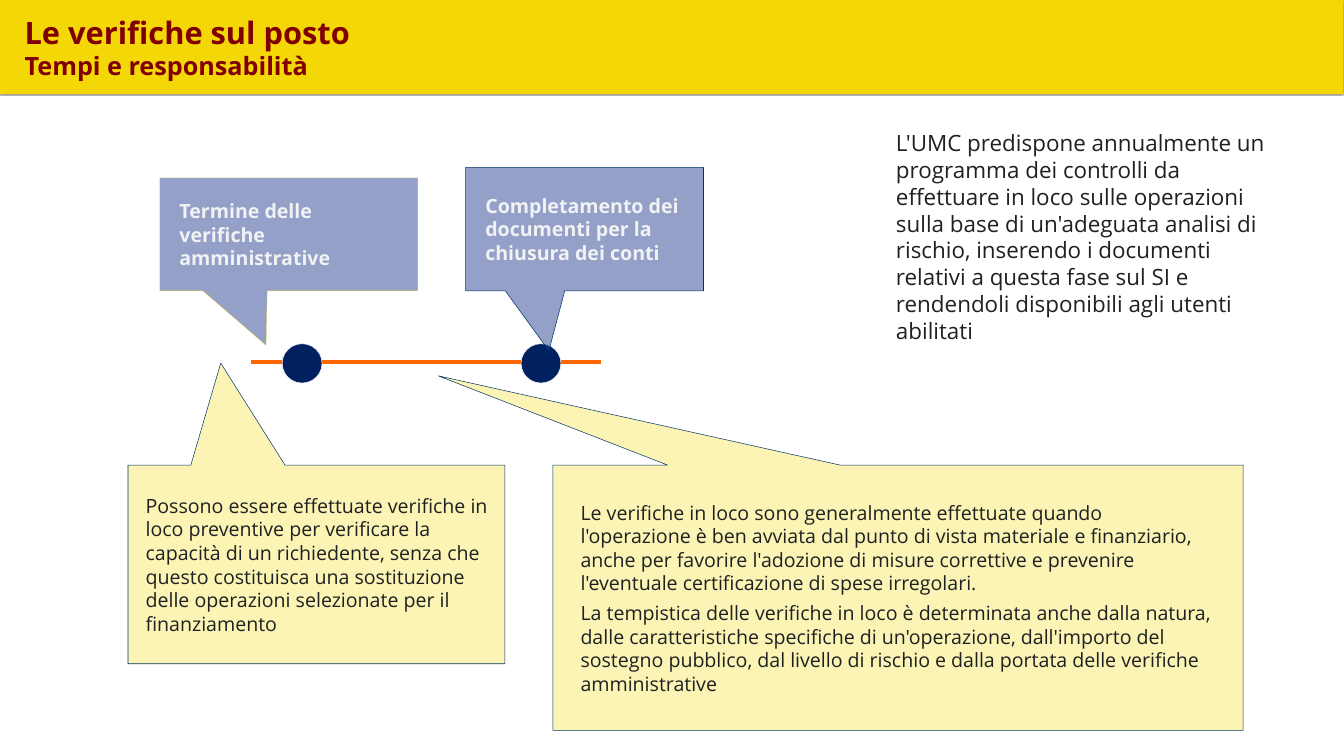
from dataclasses import dataclass

from lxml.etree import SubElement
from pptx import Presentation
from pptx.dml.color import RGBColor
from pptx.enum.shapes import MSO_CONNECTOR, MSO_SHAPE
from pptx.enum.text import MSO_ANCHOR, PP_ALIGN
from pptx.oxml.ns import qn
from pptx.util import Inches, Pt

FONT = "Open Sans"
COLORS = {
    "banner": "F3D707",
    "title": "800000",
    "text": "1D2122",
    "light": "F0F2F4",
    "timeline": "FF6600",
    "milestone": "002060",
    "blue": "2B4390",
    "yellow": "FBEA6C",
    "gold": "F9DC0A",
    "outline": "003366",
    "shadow": "000000",
}


@dataclass
class Callout:
    box: tuple[float, float, float, float]
    tip: tuple[float, float]
    fill: str
    line: str
    line_width: float
    insets: tuple[float, float, float, float]
    color: str
    bold: bool
    paragraphs: list[str]


CALLOUTS = [
    Callout((3.17, 3.53, 5.12, 2.24), (-0.088, 0.983), "blue", "gold", 0.25,
            (0.39, 0.39, 0.39, 0.39), "light", True,
            ["Termine delle verifiche amministrative"]),
    Callout((9.24, 3.32, 4.72, 2.45), (-0.15, 0.985), "blue", "outline", 0.75,
            (0.39, 0.39, 0.39, 0.39), "light", True,
            ["Completamento dei documenti per la chiusura dei conti"]),
    Callout((10.97, 9.23, 13.7, 5.26), (-0.666, -0.837), "yellow", "outline", 0.75,
            (0.55, 0.05, 0.63, 0.05), "text", False,
            ["Le verifiche in loco sono generalmente effettuate quando l'operazione è ben "
             "avviata dal punto di vista materiale e finanziario, anche per favorire "
             "l'adozione di misure correttive e prevenire l'eventuale certificazione di "
             "spese irregolari.",
             "La tempistica delle verifiche in loco è determinata anche dalla natura, dalle "
             "caratteristiche specifiche di un'operazione, dall'importo del sostegno "
             "pubblico, dal livello di rischio e dalla portata delle verifiche "
             "amministrative"]),
    Callout((2.54, 9.23, 7.48, 3.94), (-0.254, -1.014), "yellow", "outline", 0.75,
            (0.35, 0.08, 0.1, 0.08), "text", False,
            ["Possono essere effettuate verifiche in loco preventive per verificare la "
             "capacità di un richiedente, senza che questo costituisca una sostituzione "
             "delle operazioni selezionate per il finanziamento"]),
]
PROGRAMME = ("L'UMC predispone annualmente un programma dei controlli da effettuare in loco "
             "sulle operazioni sulla base di un'adeguata analisi di rischio, inserendo i "
             "documenti relativi a questa fase sul SI e rendendoli disponibili agli utenti "
             "abilitati")


def rgb(name: str) -> RGBColor:
    return RGBColor.from_string(COLORS[name])


def add_run(p, text: str, size: float, color: str, bold: bool = False) -> None:
    r = p.add_run()
    r.text = text
    r.font.name = FONT
    r.font.size = Pt(size)
    r.font.bold = bold
    r.font.color.rgb = rgb(color)


def set_frame(tf, insets: tuple, anchor) -> None:
    tf.word_wrap = True
    tf.vertical_anchor = anchor
    tf.margin_left, tf.margin_top, tf.margin_right, tf.margin_bottom = map(Inches, insets)


def add_shape(s, kind, box: tuple, fill: str, line: str | None = None, width: float = 0.75):
    sp = s.shapes.add_shape(kind, *map(Inches, box))
    sp.shadow.inherit = False
    sp.fill.solid()
    sp.fill.fore_color.rgb = rgb(fill)
    if line:
        sp.line.color.rgb = rgb(line)
        sp.line.width = Pt(width)
    else:
        sp.line.fill.background()
    return sp


def add_alpha(color, percent: int) -> None:
    SubElement(color, qn("a:alpha"), val=str(percent * 1000))


def add_banner(s) -> None:
    sp = add_shape(s, MSO_SHAPE.RECTANGLE, (-0.02, 0, 26.67, 1.87), "banner")
    effects = sp._element.spPr.find(qn("a:effectLst"))
    shadow = SubElement(effects, qn("a:outerShdw"), blurRad=str(Pt(2)), dist="0", dir="0")
    add_alpha(SubElement(shadow, qn("a:srgbClr"), val=COLORS["shadow"]), 50)


def add_text_box(s, box: tuple, insets: tuple, anchor):
    """Add an empty text box and return its first paragraph."""
    tf = s.shapes.add_textbox(*map(Inches, box)).text_frame
    set_frame(tf, insets, anchor)
    return tf.paragraphs[0]


def add_timeline(s) -> None:
    y = Inches(7.18)
    line = s.shapes.add_connector(MSO_CONNECTOR.STRAIGHT, Inches(4.99), y, Inches(11.92), y)
    line.line.color.rgb = rgb("timeline")
    line.line.width = Pt(5)
    SubElement(line._element.spPr, qn("a:effectLst"))
    for x in (5.6, 10.34):
        add_shape(s, MSO_SHAPE.OVAL, (x, 6.82, 0.79, 0.78), "milestone", "light")


def add_callout(s, c: Callout) -> None:
    sp = add_shape(s, MSO_SHAPE.RECTANGULAR_CALLOUT, c.box, c.fill, c.line, c.line_width)
    sp.adjustments[0], sp.adjustments[1] = c.tip
    add_alpha(sp._element.spPr.find(qn("a:solidFill"))[0], 50)
    tf = sp.text_frame
    set_frame(tf, c.insets, MSO_ANCHOR.MIDDLE)
    for i, text in enumerate(c.paragraphs):
        p = tf.add_paragraph() if i else tf.paragraphs[0]
        p.alignment = PP_ALIGN.LEFT
        if i:
            p.space_before = Pt(9)
        add_run(p, text, 28, c.color, c.bold)


def main() -> None:
    prs = Presentation()
    prs.slide_width, prs.slide_height = Inches(26.67), Inches(15)
    s = prs.slides.add_slide(prs.slide_layouts[6])

    add_banner(s)
    p = add_text_box(s, (17.43, 2.22, 8.03, 5.99), (0.35, 0.34, 0.35, 0.34), MSO_ANCHOR.TOP)
    add_run(p, PROGRAMME, 32, "text")
    p = add_text_box(s, (0.39, 0.2, 17.71, 1.46), (0.1, 0.05, 0.1, 0.05), MSO_ANCHOR.MIDDLE)
    add_run(p, "Le verifiche sul posto", 44, "title", True)
    p.add_line_break()
    add_run(p, "Tempi e responsabilità", 36, "title", True)
    add_timeline(s)
    for callout in CALLOUTS:
        add_callout(s, callout)

    prs.save("out.pptx")


if __name__ == "__main__":
    main()
